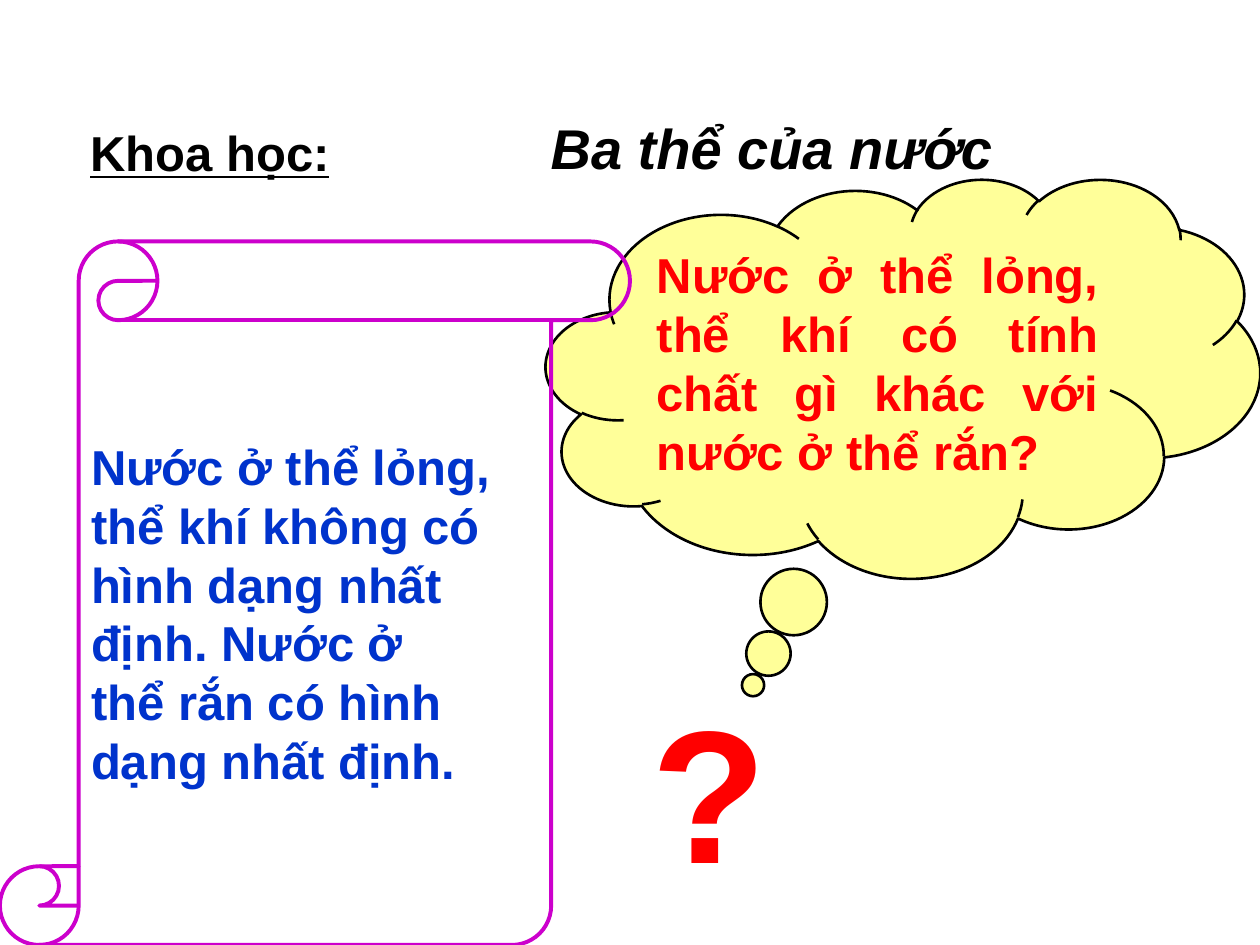
import pptx
import pptx.util
import pptx.dml.color
import pptx.enum.shapes
import pptx.enum.text

RGB = pptx.dml.color.RGBColor.from_string
SHAPE = pptx.enum.shapes.MSO_SHAPE
ANCHOR = pptx.enum.text.MSO_ANCHOR
ALIGN = pptx.enum.text.PP_ALIGN

THEME = {
    "font": "Arial",
    "ink": RGB("000000"), "question": RGB("FF0000"), "answer": RGB("0033CC"),
    "cloud": RGB("FFFF99"), "scroll": RGB("CC00CC"),
    "body": 28, "title": 32, "mark": 108,
}

prs = pptx.Presentation()
prs.slide_width = pptx.util.Inches(10)
prs.slide_height = pptx.util.Inches(7.5)
COL = prs.slide_width / 120
ROW = prs.slide_height / 90


def box(col, row, cols, rows):
    """Turn grid cells into left, top, width and height."""
    return int(col * COL), int(row * ROW), int(cols * COL), int(rows * ROW)


def write(s, lines, size, color, align=ALIGN.CENTER, anchor=ANCHOR.MIDDLE,
          wrap=False, italic=False, underline=False):
    """Put one bold paragraph per line into the shape."""
    tf = s.text_frame
    tf.word_wrap = wrap
    tf.auto_size = pptx.enum.text.MSO_AUTO_SIZE.NONE
    tf.vertical_anchor = anchor
    for i, line in enumerate(lines):
        p = tf.add_paragraph() if i else tf.paragraphs[0]
        p.alignment = align
        r = p.add_run()
        r.text = line
        r.font.name = THEME["font"]
        r.font.size = pptx.util.Pt(THEME[size])
        r.font.color.rgb = THEME[color]
        r.font.bold = True
        r.font.italic = italic
        r.font.underline = underline


slide = prs.slides.add_slide(prs.slide_layouts[5])

# Subject and lesson title
subject = slide.shapes.add_textbox(*box(0, 7, 40, 15))
write(subject, ["Khoa học:"], "body", "ink", underline=True)

title = slide.shapes.title
title.left, title.top, title.width, title.height = box(42, 5, 63, 18)
write(title, ["Ba thể của nước"], "title", "ink", italic=True)

# Question in a thought cloud
cloud = slide.shapes.add_shape(SHAPE.CLOUD_CALLOUT, *box(52, 17, 68, 38))
cloud.shadow.inherit = False
cloud.adjustments[0] = -0.21
cloud.adjustments[1] = 0.77
cloud.fill.solid()
cloud.fill.fore_color.rgb = THEME["cloud"]
cloud.line.color.rgb = THEME["ink"]
cloud.line.width = pptx.util.Pt(1.5)
write(cloud, ["Nước ở thể lỏng, thể khí có tính chất gì khác với nước ở thể rắn?"],
      "body", "question", ALIGN.JUSTIFY, ANCHOR.TOP, wrap=True)

mark = slide.shapes.add_textbox(*box(58, 65, 19, 20))
write(mark, ["?"], "mark", "question")

# Answer on a scroll
scroll = slide.shapes.add_shape(SHAPE.VERTICAL_SCROLL, *box(0, 23, 60, 67))
scroll.shadow.inherit = False
scroll.adjustments[0] = 0.125
scroll.fill.background()
scroll.line.color.rgb = THEME["scroll"]
scroll.line.width = pptx.util.Pt(2.25)
write(scroll, ["Nước ở thể lỏng, ", "thể khí không có", "hình dạng nhất ",
               "định. Nước ở ", "thể rắn có hình ", "dạng nhất định."],
      "body", "answer", ALIGN.JUSTIFY)

prs.save("out.pptx")
